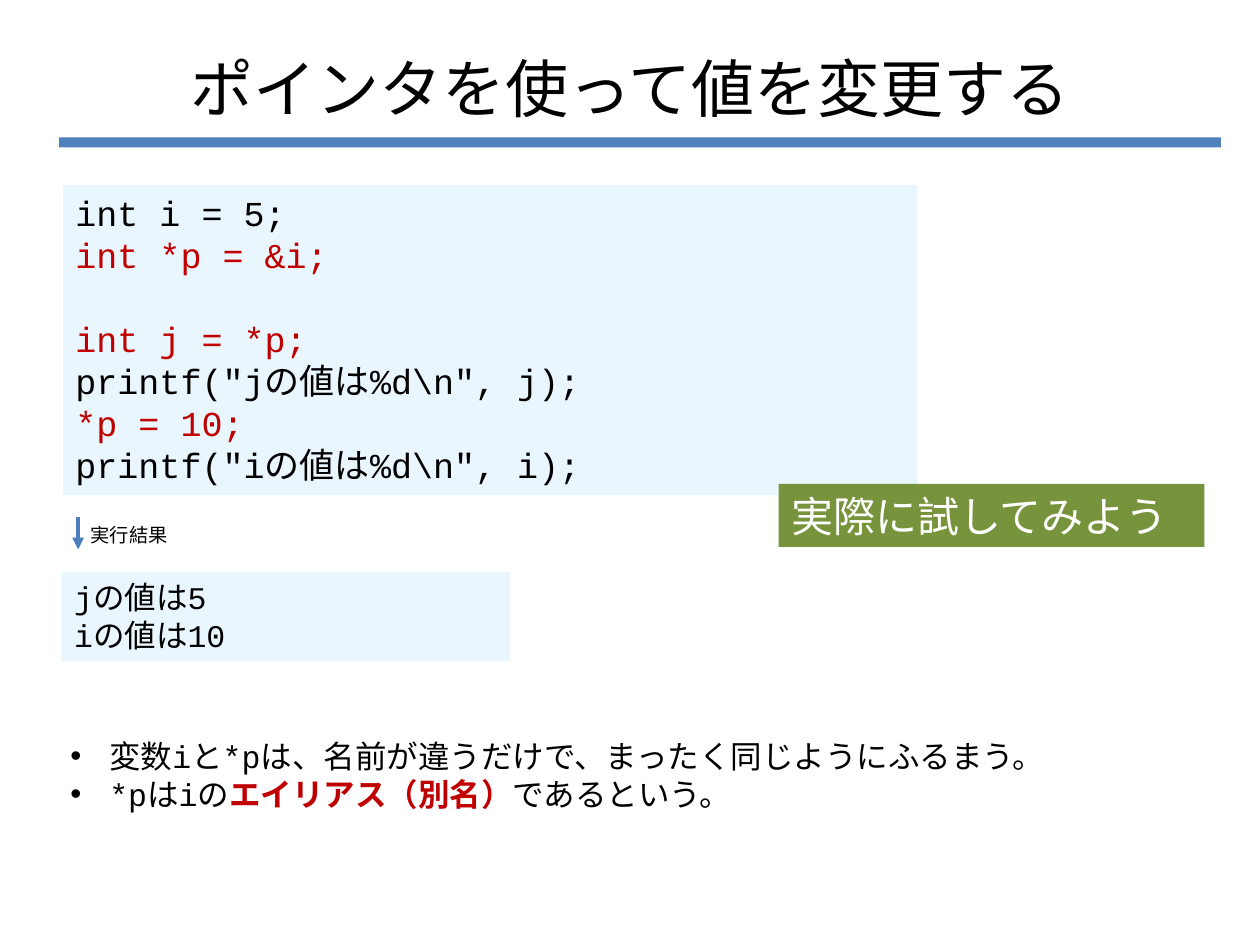
import pptx
import pptx.dml.color
import pptx.enum.shapes
import pptx.enum.text
import pptx.util
from dataclasses import dataclass
from lxml import etree

COLS, ROWS = 100, 75  # grid of square cells


@dataclass(frozen=True)
class Theme:
    sans: str = "Arial"
    mono: str = "Courier New"
    black: str = "000000"
    white: str = "FFFFFF"
    red: str = "C00000"
    blue: str = "4F81BD"
    arrow: str = "4B7EBC"
    pale: str = "EAF6FD"
    green: str = "77933C"
    head: int = 36
    call: int = 24
    code: int = 20
    body: int = 18
    small: int = 11


T = Theme()
NS = "http://schemas.openxmlformats.org/drawingml/2006/main"
SHAPE = pptx.enum.shapes.MSO_SHAPE
ANCHOR = pptx.enum.text.MSO_ANCHOR
ALIGN = pptx.enum.text.PP_ALIGN


def cell(num):
    """Length of a number of grid cells."""
    return pptx.util.Inches(num * 10 / COLS)


def place(*box):
    return [cell(num) for num in box]


def color(code):
    return pptx.dml.color.RGBColor.from_string(code)


def child(node, tag, **attrs):
    return etree.SubElement(node, f"{{{NS}}}{tag}", attrs)


def write(frame, lines, size, font=T.sans, ink=T.black, align=ALIGN.LEFT,
          anchor=ANCHOR.TOP, wrap=True, bullet=False, gaps=None):
    """Each line is a list of (text, format) runs; gaps maps line to space before."""
    frame.word_wrap = wrap
    frame.vertical_anchor = anchor
    for row, runs in enumerate(lines):
        para = frame.add_paragraph() if row else frame.paragraphs[0]
        para.alignment = align
        if gaps and row in gaps:
            para.space_before = pptx.util.Pt(gaps[row])
        if bullet:
            props = para._p.get_or_add_pPr()
            dent = cell(3.1)
            props.set("marL", str(dent))
            props.set("indent", str(-dent))
            child(props, "buFont", typeface=T.sans)
            child(props, "buChar", char="•")
        for text, form in runs:
            run = para.add_run()
            run.text = text
            run.font.size = pptx.util.Pt(size)
            run.font.name = form.get("font", font)
            run.font.bold = form.get("bold", False)
            run.font.color.rgb = color(form.get("ink", ink))


def panel(slide, box, fill):
    shape = slide.shapes.add_shape(SHAPE.RECTANGLE, *place(*box))
    shape.shadow.inherit = False
    shape.fill.solid()
    shape.fill.fore_color.rgb = color(fill)
    shape.line.fill.background()
    return shape.text_frame


def label(slide, box):
    return slide.shapes.add_textbox(*place(*box)).text_frame


def arrow(slide, start, end):
    line = slide.shapes.add_connector(
        pptx.enum.shapes.MSO_CONNECTOR.STRAIGHT, *place(*start, *end))
    line.line.color.rgb = color(T.arrow)
    line.line.width = pptx.util.Pt(2.25)
    child(line.line._get_or_add_ln(), "tailEnd", type="triangle")
    child(line._element.spPr, "effectLst")


def title(slide, text):
    head = slide.shapes.title
    head.left, head.top, head.width, head.height = place(5, 3, 90, 7.9)
    write(head.text_frame, [[(text, {})]], T.head,
          align=ALIGN.CENTER, anchor=ANCHOR.MIDDLE)


def main():
    deck = pptx.Presentation()
    deck.slide_width, deck.slide_height = place(COLS, ROWS)
    slide = deck.slides.add_slide(deck.slide_layouts[5])
    red, mono = {"ink": T.red}, {"font": T.mono}

    # Title and rule
    panel(slide, (4.7, 10.9, 92.2, 0.8), T.blue)
    title(slide, "ポインタを使って値を変更する")

    # Program, with a gap of one line before its second part
    code = [
        [("int i = 5;", {})],
        [("int *p = &i;", red)],
        [("int j = *p;", red)],
        [('printf("jの値は%d\\n", j);', {})],
        [("*p = 10;", red)],
        [('printf("iの値は%d\\n", i);', {})],
    ]
    write(panel(slide, (5, 14.7, 67.8, 24.6), T.pale), code, T.code,
          font=T.mono, gaps={2: 24})

    # Output
    write(panel(slide, (4.9, 45.4, 35.6, 7.1), T.pale),
          [[("jの値は5", {})], [("iの値は10", {})]], T.body, font=T.mono)
    arrow(slide, (6.2, 41), (6.2, 43.6))
    write(label(slide, (6.2, 41, 8.2, 2.9)), [[("実行結果", {})]],
          T.small, wrap=False)

    # Notes on the alias
    notes = [
        [("変数", {}), ("i", mono), ("と", {}), ("*p", mono),
         ("は、名前が違うだけで、まったく同じようにふるまう。", {})],
        [("*p", mono), ("は", {}), ("i", mono), ("の", {}),
         ("エイリアス（別名）", {"ink": T.red, "bold": True}),
         ("であるという。", {})],
    ]
    write(label(slide, (4.6, 58, 80.4, 7.1)), notes, T.body, bullet=True)

    # Call to action
    write(panel(slide, (61.8, 38.4, 33.8, 5), T.green),
          [[("実際に試してみよう", {})]], T.call, font=T.mono, ink=T.white)

    deck.save("out.pptx")


if __name__ == "__main__":
    main()
